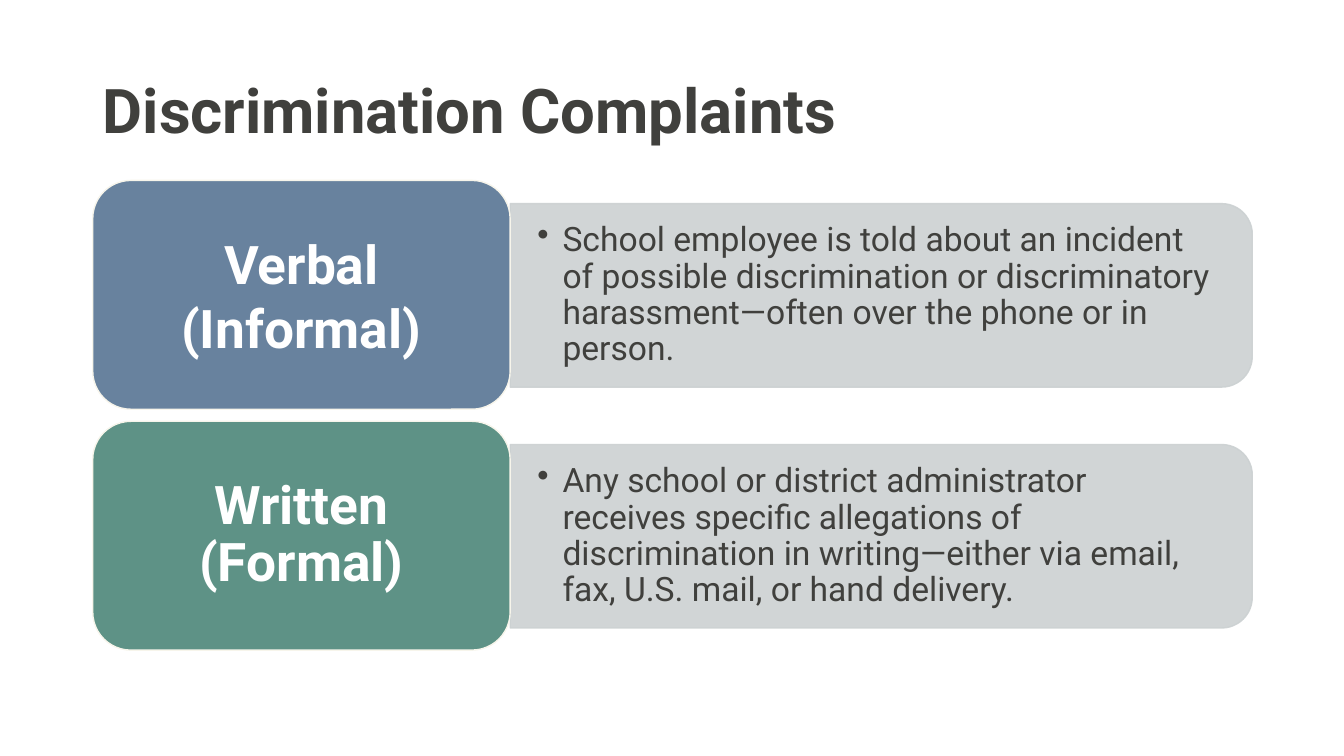
from lxml.etree import SubElement
from pptx import Presentation
from pptx.dml.color import RGBColor
from pptx.enum.shapes import MSO_SHAPE
from pptx.enum.text import MSO_ANCHOR, PP_ALIGN
from pptx.oxml.ns import qn
from pptx.util import Pt

EMU_PER_PX = 9144
INK = RGBColor(0x40, 0x40, 0x3D)
WHITE = RGBColor(0xFF, 0xFF, 0xFF)
CREAM = RGBColor(0xF7, 0xF5, 0xEB)
GREY = RGBColor(0xCC, 0xD1, 0xD2)
BLUE = RGBColor(0x68, 0x82, 0x9E)
GREEN = RGBColor(0x5E, 0x92, 0x86)

ROW_STEP = 239
COMPLAINTS = [
    ("Verbal (Informal)", BLUE, 1.0,
     "School employee is told about an incident of possible discrimination "
     "or discriminatory harassment—often over the phone or in person."),
    ("Written (Formal)", GREEN, 0.9,
     "Any school or district administrator receives specific allegations of "
     "discrimination in writing—either via email, fax, U.S. mail, or hand delivery."),
]


def px(length):
    return length * EMU_PER_PX


class SlideBuilder:
    font_name = "Roboto"

    def __init__(self, page):
        self.page = page

    def fill_text(self, box, text, size, color, bold=False, spacing=1.0,
                  align=PP_ALIGN.LEFT, inset=(10, 5), bulleted=False):
        """Fill a shape with one vertically centred paragraph."""
        frame = box.text_frame
        frame.word_wrap = True
        frame.vertical_anchor = MSO_ANCHOR.MIDDLE
        frame.margin_left = frame.margin_right = px(inset[0])
        frame.margin_top = frame.margin_bottom = px(inset[1])
        para = frame.paragraphs[0]
        para.alignment = align
        para.line_spacing = spacing
        if bulleted:
            properties = para._p.get_or_add_pPr()
            properties.set("marL", str(px(25)))
            properties.set("indent", str(px(-25)))
            SubElement(properties, qn("a:buChar")).set("char", "•")
        span = para.add_run()
        span.text = text
        span.font.name = self.font_name
        span.font.size = Pt(size)
        span.font.bold = bold
        span.font.color.rgb = color

    def text(self, left, top, width, height, text, size, **style):
        box = self.page.shapes.add_textbox(px(left), px(top), px(width), px(height))
        self.fill_text(box, text, size, INK, spacing=0.9, **style)

    def shape(self, kind, left, top, width, height, fill, line):
        box = self.page.shapes.add_shape(kind, px(left), px(top), px(width), px(height))
        box.shadow.inherit = False
        box.fill.solid()
        box.fill.fore_color.rgb = fill
        box.line.color.rgb = line
        box.line.width = Pt(1)
        return box

    def panel(self, left, top, width, height):
        """Draw a translucent bar rounded on its right, as a quarter-turned shape."""
        shift = (width - height) // 2
        box = self.shape(MSO_SHAPE.ROUND_2_SAME_RECTANGLE, left + shift, top - shift,
                         height, width, GREY, GREY)
        box.rotation = 90
        for color in box._element.spPr.iter(qn("a:srgbClr")):
            SubElement(color, qn("a:alpha")).set("val", "90000")

    def label(self, left, top, width, height, text, fill, spacing):
        box = self.shape(MSO_SHAPE.ROUNDED_RECTANGLE, left, top, width, height, fill, CREAM)
        self.fill_text(box, text, 38, WHITE, bold=True, spacing=spacing,
                       align=PP_ALIGN.CENTER, inset=(16, 8))


def main():
    deck = Presentation()
    deck.slide_width = px(1333)
    deck.slide_height = px(750)
    builder = SlideBuilder(deck.slides.add_slide(deck.slide_layouts[6]))
    builder.text(92, 40, 1150, 145, "Discrimination Complaints", 44, bold=True)
    for row, (name, fill, spacing, description) in enumerate(COMPLAINTS):
        top = 179 + row * ROW_STEP
        builder.panel(506, top + 23, 736, 182)
        builder.text(506, top + 32, 727, 164, description, 24,
                     inset=(27, 14), bulleted=True)
        builder.label(92, top, 414, 227, name, fill, spacing)
    deck.save("out.pptx")


if __name__ == "__main__":
    main()
